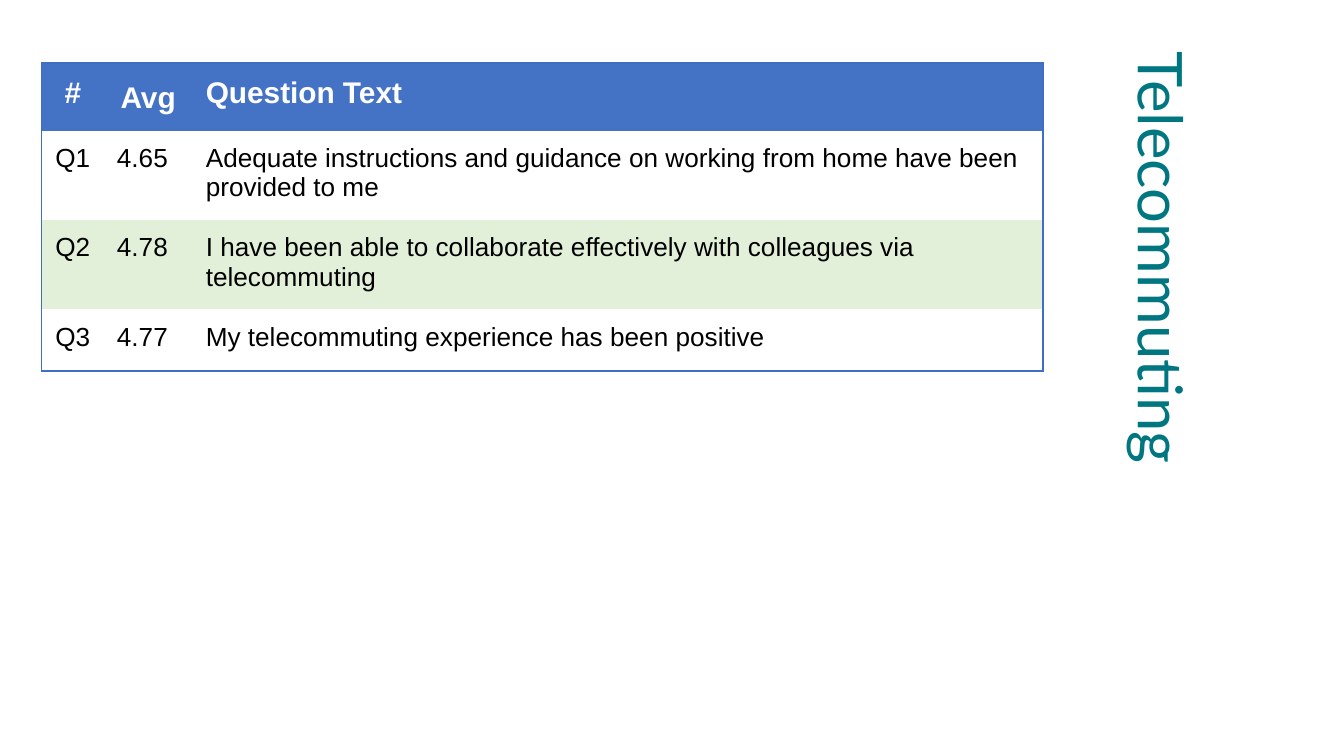
from dataclasses import dataclass

import pptx
import pptx.util
from lxml import etree
from pptx.dml.color import RGBColor
from pptx.enum.text import MSO_ANCHOR, PP_ALIGN
from pptx.oxml.ns import qn
from pptx.util import Cm, Pt

BLUE, BORDER, TEAL = "4472C4", "3F6FC3", "007780"
WHITE, GREEN, BLACK = "FFFFFF", "E2F0D9", "000000"


@dataclass
class Row:
    texts: tuple[str, str, str]
    fill: str = WHITE
    height: float = 1.17
    color: str = BLACK
    size: int = 14
    header: bool = False


COLUMNS = (1.17, 1.68, 4.55, 11.52)
ROWS = (
    Row(("#", "Avg", "Question Text"), BLUE, 1.24, WHITE, 16, True),
    Row(("Q1", "4.65", "Adequate instructions and guidance on working from home "
         "have been provided to me")),
    Row(("Q2", "4.78", "I have been able to collaborate effectively with colleagues "
         "via telecommuting"), GREEN),
    Row(("Q3", "4.77", "My telecommuting experience has been positive")),
)


def rgb(value: str) -> RGBColor:
    return RGBColor.from_string(value)


def add_run(p, text: str, font: str, size: float, color: str, bold: bool = False) -> None:
    r = p.add_run()
    r.text = text
    r.font.name, r.font.size, r.font.bold = font, Pt(size), bold
    r.font.color.rgb = rgb(color)


def set_borders(cell, edges: dict[str, bool]) -> None:
    """Draw the chosen edges and clear the others."""
    tc_pr = cell._tc.get_or_add_tcPr()
    for side, visible in edges.items():
        ln = etree.SubElement(tc_pr, qn(f"a:ln{side}"), w=str(Pt(0.75)))
        if visible:
            fill = etree.SubElement(ln, qn("a:solidFill"))
            etree.SubElement(fill, qn("a:srgbClr"), val=BORDER)
        else:
            etree.SubElement(ln, qn("a:noFill"))


def add_title(s, text: str) -> None:
    sp = s.shapes.add_textbox(Cm(15.82), Cm(4.11), Cm(12.12), Cm(5.49))
    sp.rotation = 90
    tf = sp.text_frame
    tf.word_wrap = True
    tf.vertical_anchor = MSO_ANCHOR.MIDDLE
    tf.margin_left = tf.margin_right = Cm(0.18)
    tf.margin_top = tf.margin_bottom = Cm(0.1)
    p = tf.paragraphs[0]
    p.line_spacing = 0.9
    add_run(p, text, "Lato", 33, TEAL)


def add_question_table(s, rows: tuple[Row, ...], filled: bool) -> None:
    """Add the table; body cells are filled only when asked for."""
    table = s.shapes.add_table(
        len(rows), len(COLUMNS), Cm(0.79), Cm(1.19), Cm(sum(COLUMNS)), Cm(5.82)).table
    table.horz_banding = False
    for column, width in zip(table.columns, COLUMNS):
        column.width = Cm(width)

    for i, row in enumerate(rows):
        table.rows[i].height = Cm(row.height)
        # The question spans the last two columns
        table.cell(i, 2).merge(table.cell(i, 3))
        for j in range(len(COLUMNS)):
            cell = table.cell(i, j)
            set_borders(cell, {"L": j == 0, "R": j >= 2,
                               "T": i == 0, "B": i == len(rows) - 1})
            if filled or row.header:
                cell.fill.solid()
                cell.fill.fore_color.rgb = rgb(row.fill)
            else:
                cell.fill.background()
            cell.margin_left = cell.margin_right = Cm(0.25)
            cell.margin_top = cell.margin_bottom = Cm(0.25)
        for j, text in enumerate(row.texts):
            p = table.cell(i, j).text_frame.paragraphs[0]
            centred = j == 0 or (row.header and j == 1)
            p.alignment = PP_ALIGN.CENTER if centred else PP_ALIGN.LEFT
            if row.header and j == 1:
                p.line_spacing = 1.15
            add_run(p, text, "Arial", row.size, row.color, row.header)


def main() -> None:
    prs = pptx.Presentation()
    prs.slide_width, prs.slide_height = Cm(25.4), Cm(14.29)
    s = prs.slides.add_slide(prs.slide_layouts[6])
    # Vertical title on the right
    add_title(s, "Telecommuting")
    # Survey questions: a plain table with the shaded one on top
    for filled in (False, True):
        add_question_table(s, ROWS, filled)
    prs.save("out.pptx")


if __name__ == "__main__":
    main()
